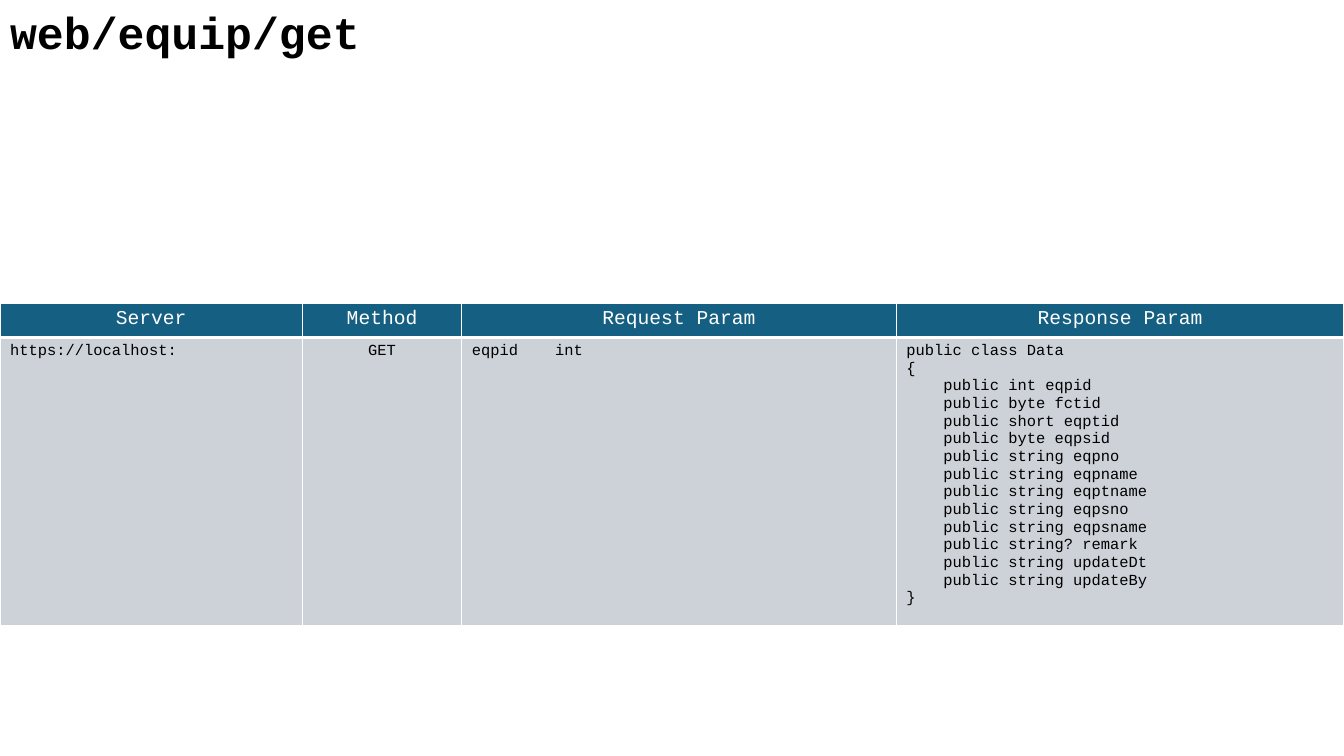
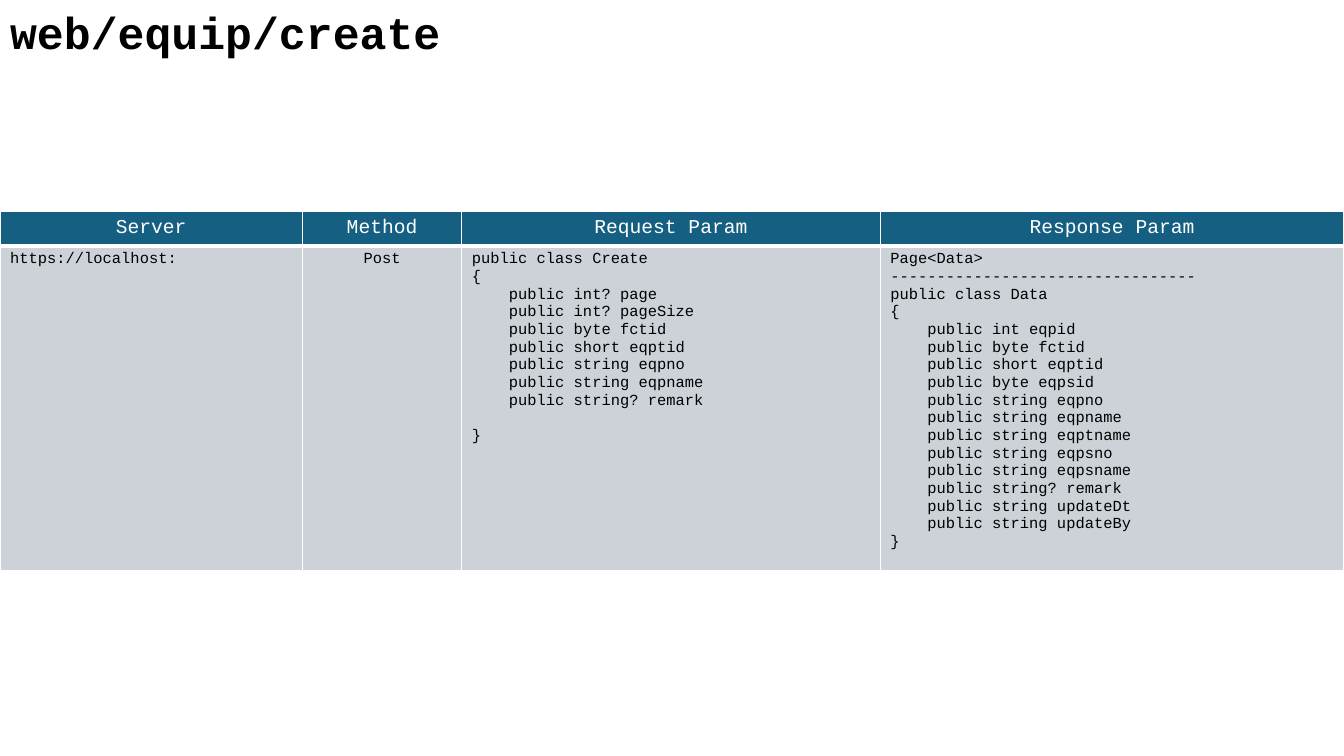
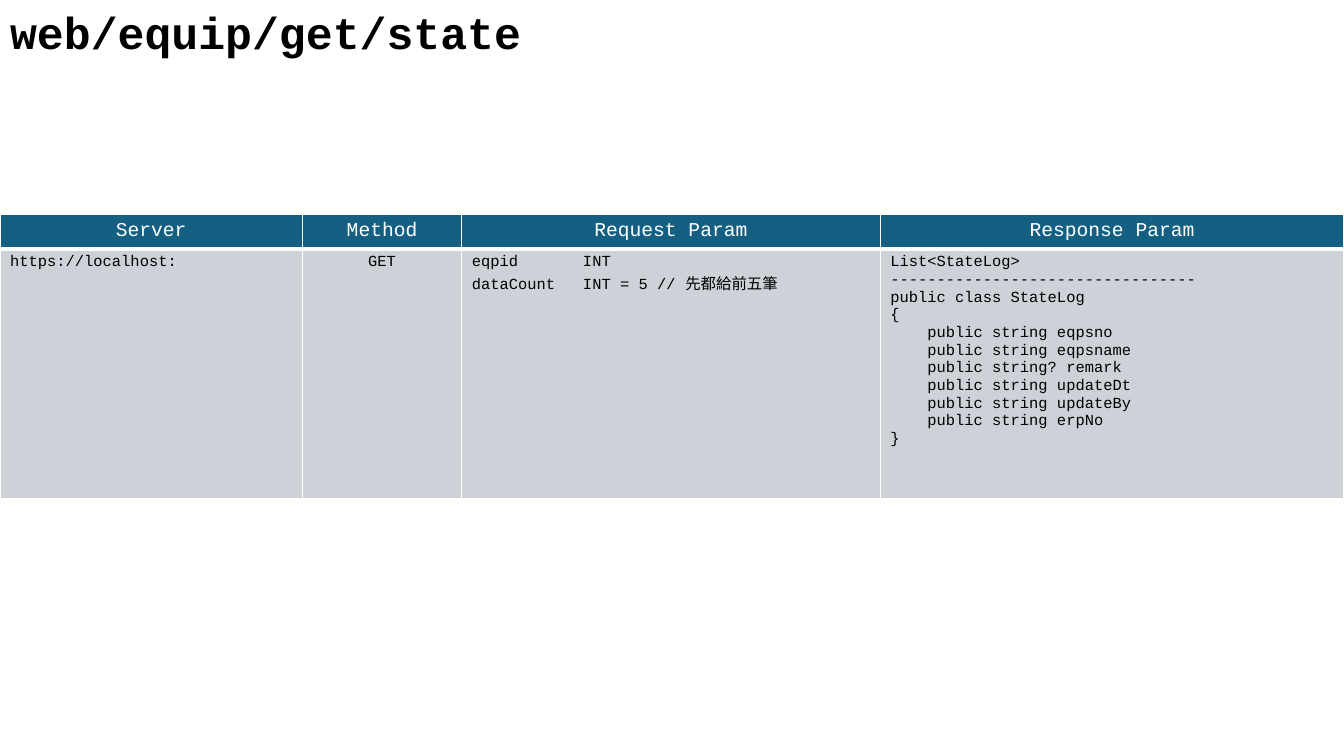
from lxml import etree
from pptx import Presentation
from pptx.dml.color import RGBColor
from pptx.enum.text import MSO_ANCHOR, MSO_AUTO_SIZE, PP_ALIGN
from pptx.oxml.ns import qn
from pptx.util import Inches, Pt

FONT = "Courier New"
BLACK = RGBColor(0x00, 0x00, 0x00)
WHITE = RGBColor(0xFF, 0xFF, 0xFF)
HEADER_BLUE = RGBColor(0x15, 0x60, 0x82)
BODY_GRAY = RGBColor(0xCC, 0xD2, 0xD8)

TITLE_FORMAT = {"name": FONT, "size": Pt(32), "bold": True}
HEADER_FORMAT = {"name": FONT, "size": Pt(14), "bold": False}
BODY_FORMAT = {"name": FONT, "size": Pt(11), "bold": False}

HEADINGS = ["Server", "Method", "Request Param", "Response Param"]
SERVER = "https://localhost:"
CENTERED_COLUMN = HEADINGS.index("Method")
HEADER_HEIGHT = 0.34
RULE = "-" * 33

DATA_CLASS = """public class Data
{
    public int eqpid
    public byte fctid
    public short eqptid
    public byte eqpsid
    public string eqpno
    public string eqpname
    public string eqptname
    public string eqpsno
    public string eqpsname
    public string? remark
    public string updateDt
    public string updateBy
}"""

CREATE_CLASS = """public class Create
{
    public int? page
    public int? pageSize
    public byte fctid
    public short eqptid
    public string eqpno
    public string eqpname
    public string? remark

}"""

STATE_LOG_CLASS = """public class StateLog
{
    public string eqpsno
    public string eqpsname
    public string? remark
    public string updateDt
    public string updateBy
    public string erpNo
}"""

STATE_REQUEST = """eqpid       INT
dataCount   INT = 5 // 先都給前五筆"""

ENDPOINTS = [
    {"route": "web/equip/get", "top": 3.01, "body_height": 2.84,
     "widths": [3, 1.58, 4.31, 4.44],
     "values": [SERVER, "GET", "eqpid    int", DATA_CLASS]},
    {"route": "web/equip/create", "top": 2.1, "body_height": 3.21,
     "widths": [3, 1.58, 4.15, 4.6],
     "values": [SERVER, "Post", CREATE_CLASS, f"Page<Data>\n{RULE}\n{DATA_CLASS}"]},
    {"route": "web/equip/get/state", "top": 2.13, "body_height": 2.48,
     "widths": [3, 1.58, 4.15, 4.6],
     "values": [SERVER, "GET", STATE_REQUEST, f"List<StateLog>\n{RULE}\n{STATE_LOG_CLASS}"]},
]


def write_lines(frame, text, font_format, color, align):
    for number, line in enumerate(text.split("\n")):
        paragraph = frame.add_paragraph() if number else frame.paragraphs[0]
        paragraph.alignment = align
        run = paragraph.add_run()
        run.text = line
        for attribute, value in font_format.items():
            setattr(run.font, attribute, value)
        run.font.color.rgb = color


def style_cell(cell, fill, bottom_width):
    """Give the cell white borders and a solid fill, in the order the schema asks for."""
    properties = cell._tc.get_or_add_tcPr()
    for side, width in {"L": 1, "R": 1, "T": 1, "B": bottom_width}.items():
        border = etree.SubElement(properties, qn(f"a:ln{side}"), w=str(Pt(width)))
        solid = etree.SubElement(border, qn("a:solidFill"))
        etree.SubElement(solid, qn("a:srgbClr"), val=str(WHITE))
    cell.fill.solid()
    cell.fill.fore_color.rgb = fill


prs = Presentation()
prs.slide_width = Inches(13.33)
prs.slide_height = Inches(7.5)
title_only = prs.slide_layouts[5]

for endpoint in ENDPOINTS:
    slide = prs.slides.add_slide(title_only)

    title = slide.shapes.title
    title.left, title.top = Inches(0), Inches(0)
    title.width, title.height = Inches(9.45), Inches(0.64)
    title.text_frame.word_wrap = True
    title.text_frame.auto_size = MSO_AUTO_SIZE.SHAPE_TO_FIT_TEXT
    title.text_frame.vertical_anchor = MSO_ANCHOR.TOP
    write_lines(title.text_frame, endpoint["route"], TITLE_FORMAT, BLACK, PP_ALIGN.LEFT)

    heights = [HEADER_HEIGHT, endpoint["body_height"]]
    table = slide.shapes.add_table(
        2, len(HEADINGS), Inches(0), Inches(endpoint["top"]),
        Inches(sum(endpoint["widths"])), Inches(sum(heights))).table
    for row, height in zip(table.rows, heights):
        row.height = Inches(height)

    columns = zip(endpoint["widths"], HEADINGS, endpoint["values"])
    for index, (width, heading, value) in enumerate(columns):
        table.columns[index].width = Inches(width)

        header = table.cell(0, index)
        style_cell(header, HEADER_BLUE, 3)
        write_lines(header.text_frame, heading, HEADER_FORMAT, WHITE, PP_ALIGN.CENTER)

        body = table.cell(1, index)
        style_cell(body, BODY_GRAY, 1)
        align = PP_ALIGN.CENTER if index == CENTERED_COLUMN else PP_ALIGN.LEFT
        write_lines(body.text_frame, value, BODY_FORMAT, BLACK, align)

prs.save("out.pptx")
